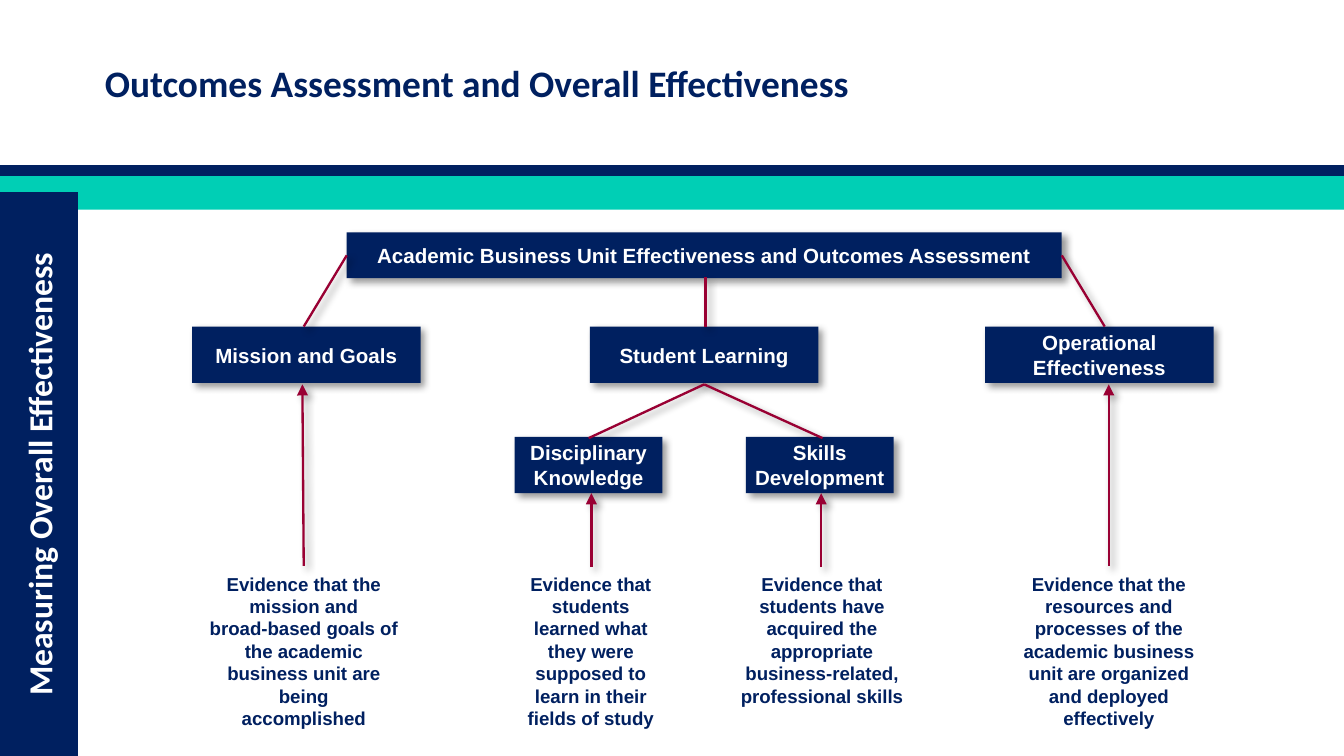
from lxml.etree import SubElement
from pptx import Presentation
from pptx.dml.color import RGBColor
from pptx.enum.shapes import MSO_CONNECTOR, MSO_SHAPE
from pptx.enum.text import MSO_ANCHOR, PP_ALIGN
from pptx.oxml.ns import qn
from pptx.util import Emu, Pt

SCALE = 9144
PAGE_WIDTH = 1000
NAVY = RGBColor(0x00, 0x20, 0x60)
TEAL = RGBColor(0x00, 0xCF, 0xB5)
CRIMSON = RGBColor(0x99, 0x00, 0x33)
WHITE = RGBColor(0xFF, 0xFF, 0xFF)

HEADING_BOX = (258, 173, 532, 34)
BRANCH_TOP, BRANCH_WIDTH = 243, 170
SKILL_TOP, SKILL_WIDTH = 325, 110
BOX_HEIGHT = 42
EVIDENCE_TOP, EVIDENCE_HEIGHT = 421, 127

BRANCHES = [
    (143, "Mission and Goals"),
    (439, "Student Learning"),
    (733, "Operational\nEffectiveness"),
]
SKILLS = [
    (383, "Disciplinary Knowledge"),
    (555, "Skills\nDevelopment"),
]
EVIDENCE = [
    (141, 170, "Evidence that the\nmission and\nbroad-based goals of the academic "
               "business unit are being\naccomplished"),
    (375, 129, "Evidence that students learned what they were supposed to learn "
               "in their fields of study"),
    (532, 159, "Evidence that students have acquired the appropriate "
               "business-related, professional skills"),
    (750, 150, "Evidence that the\nresources and processes of the academic business "
               "unit are organized and deployed effectively"),
]
LINES = [
    (258, 190, 226, 243),
    (790, 190, 822, 243),
    (525, 243, 525, 206),
    (524, 286, 438, 326),
    (524, 286, 612, 326),
]
ARROWS = [
    (226, 421, 225, 286),
    (440, 422, 440, 367),
    (611, 422, 611, 367),
    (825, 421, 825, 286),
]


def px(*lengths):
    return [Emu(length * SCALE) for length in lengths]


def add_shadow(properties):
    effects = properties.find(qn("a:effectLst"))
    if effects is None:
        effects = SubElement(properties, qn("a:effectLst"))
    shadow = SubElement(effects, qn("a:outerShdw"), blurRad=str(Pt(4)),
                        dist=str(Pt(3)), dir="2700000", algn="tl", rotWithShape="0")
    color = SubElement(shadow, qn("a:srgbClr"), val="000000")
    SubElement(color, qn("a:alpha"), val="40000")


def write_text(shape, text, size, color, font="Arial", align=PP_ALIGN.CENTER,
               anchor=MSO_ANCHOR.MIDDLE, margins=(0, 0, 0, 0)):
    frame = shape.text_frame
    frame.text = text
    frame.word_wrap = True
    frame.vertical_anchor = anchor
    (frame.margin_left, frame.margin_top,
     frame.margin_right, frame.margin_bottom) = px(*margins)
    for para in frame.paragraphs:
        para.alignment = align
        for span in para.runs:
            span.font.name = font
            span.font.size = Pt(size)
            span.font.bold = True
            span.font.color.rgb = color


def add_band(page, place, color):
    band = page.shapes.add_shape(MSO_SHAPE.RECTANGLE, *px(*place))
    band.fill.solid()
    band.fill.fore_color.rgb = color
    band.line.fill.background()
    band.shadow.inherit = False
    return band


def add_box(page, place, text):
    box = add_band(page, place, NAVY)
    add_shadow(box._element.spPr)
    write_text(box, text, 11, WHITE)


def add_text(page, place, text, size, **style):
    box = page.shapes.add_textbox(*px(*place))
    write_text(box, text, size, NAVY, **style)


def add_line(page, ends, arrow=False):
    line = page.shapes.add_connector(MSO_CONNECTOR.STRAIGHT, *px(*ends))
    line.line.color.rgb = CRIMSON
    line.line.width = Pt(1.25)
    properties = line._element.spPr
    if arrow:
        SubElement(properties.find(qn("a:ln")), qn("a:tailEnd"), type="triangle")
    add_shadow(properties)


def add_sidebar(page):
    sidebar = add_band(page, (0, 143, 58, 420), NAVY)
    write_text(sidebar, "Measuring Overall Effectiveness", 18, WHITE,
               font="Calibri", margins=(10, 0, 10, 0))
    sidebar.text_frame._txBody.bodyPr.set("vert", "vert270")


def main():
    deck = Presentation()
    deck.slide_width = Emu(PAGE_WIDTH * SCALE)
    deck.slide_height = Emu(PAGE_WIDTH * SCALE * 9 // 16)
    page = deck.slides.add_slide(deck.slide_layouts[6])

    add_band(page, (0, 123, PAGE_WIDTH, 23), NAVY)
    add_band(page, (0, 131, PAGE_WIDTH, 25), TEAL)
    add_sidebar(page)
    add_text(page, (0, 0, PAGE_WIDTH, 123),
             "Outcomes Assessment and Overall Effectiveness",
             20, font="Calibri", align=PP_ALIGN.LEFT, margins=(78, 0, 0, 0))

    add_box(page, HEADING_BOX,
            "Academic Business Unit Effectiveness and Outcomes Assessment")
    for left, text in BRANCHES:
        add_box(page, (left, BRANCH_TOP, BRANCH_WIDTH, BOX_HEIGHT), text)
    for left, text in SKILLS:
        add_box(page, (left, SKILL_TOP, SKILL_WIDTH, BOX_HEIGHT), text)
    for left, width, text in EVIDENCE:
        add_text(page, (left, EVIDENCE_TOP, width, EVIDENCE_HEIGHT), text, 10,
                 anchor=MSO_ANCHOR.TOP, margins=(10, 5, 10, 5))
    for ends in LINES:
        add_line(page, ends)
    for ends in ARROWS:
        add_line(page, ends, arrow=True)

    deck.save("out.pptx")


if __name__ == "__main__":
    main()
